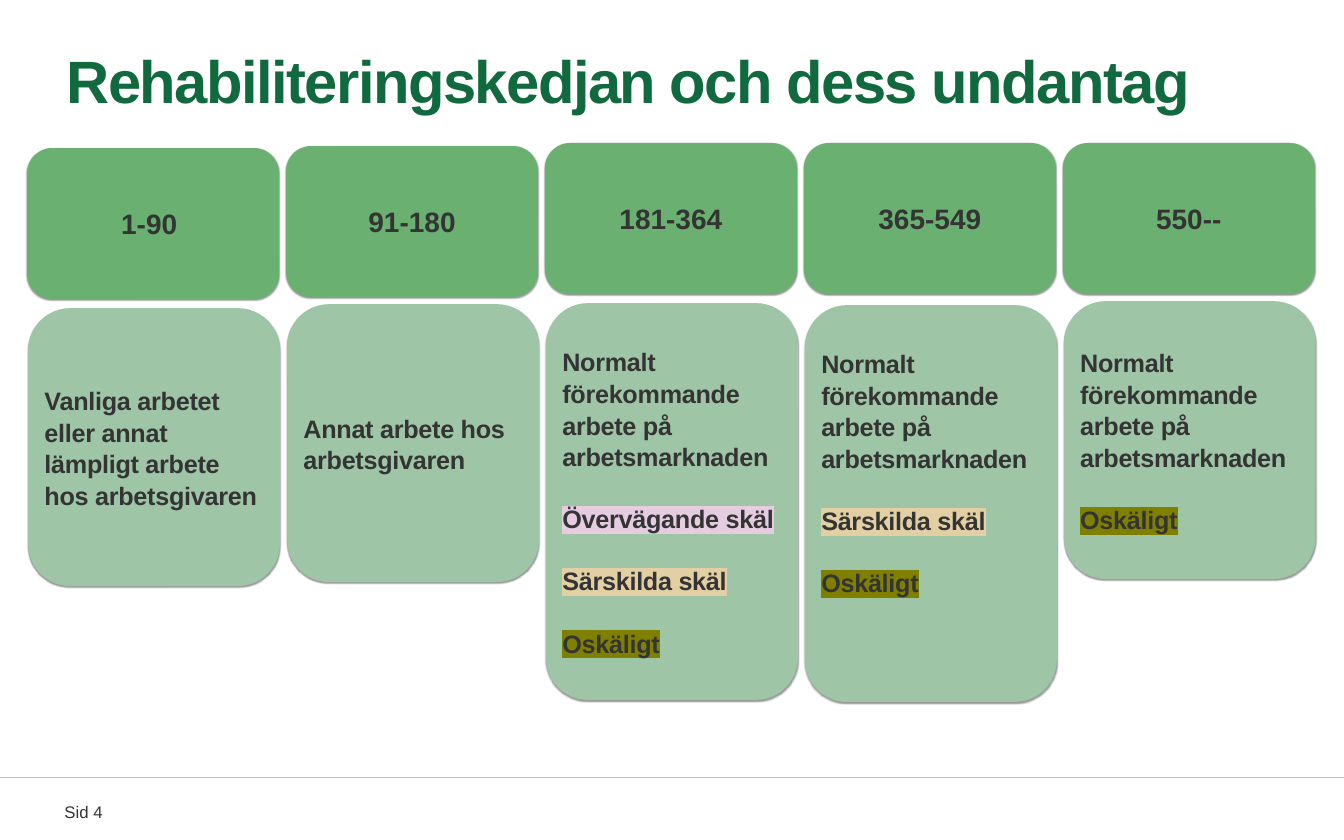
from lxml import etree
from pptx import Presentation
from pptx.dml.color import RGBColor
from pptx.enum.shapes import MSO_CONNECTOR, MSO_SHAPE
from pptx.enum.text import MSO_ANCHOR, PP_ALIGN
from pptx.oxml.ns import qn
from pptx.util import Inches, Pt

WHITE = RGBColor(0xFF, 0xFF, 0xFF)
BLACK = RGBColor(0x00, 0x00, 0x00)
INK = RGBColor(0x34, 0x34, 0x34)
TITLE_GREEN = RGBColor(0x11, 0x69, 0x3E)
DAYS_GREEN = RGBColor(0x69, 0xB0, 0x71)
TEST_GREEN = RGBColor(0x9F, 0xC5, 0xA7)
RULE_GREEN = RGBColor(0xA6, 0xD0, 0xAB)
PINK = RGBColor(0xE6, 0xCC, 0xE1)
SAND = RGBColor(0xE2, 0xCF, 0xA3)
OLIVE = RGBColor(0x80, 0x80, 0x00)

SLIDE_WIDTH, SLIDE_HEIGHT = 13.34, 8.34
FOOTER_TOP = 7.72
FIRST_LEFT, PITCH, CARD_WIDTH = 0.27, 2.57, 2.5
DAYS_HEIGHT = 1.5
LOW, HIGH = 2.76, 3.94

NORMAL_WORK = ("Normalt förekommande arbete på arbetsmarknaden", None)
WEIGHTY = ("Övervägande skäl", PINK)
SPECIAL = ("Särskilda skäl", SAND)
UNREASONABLE = ("Oskäligt", OLIVE)

STEPS = [
    ("1-90 ", 1.47, 3.06, LOW, 0.08,
     [("Vanliga arbetet eller annat lämpligt arbete hos arbetsgivaren", None)]),
    ("91-180", 1.45, 3.02, LOW, 0.08, [("Annat arbete hos arbetsgivaren", None)]),
    ("181-364", 1.42, 3.01, HIGH, 0.08, [NORMAL_WORK, WEIGHTY, SPECIAL, UNREASONABLE]),
    ("365-549", 1.42, 3.03, HIGH, 0.7, [NORMAL_WORK, SPECIAL, UNREASONABLE]),
    ("550--", 1.42, 2.99, LOW, 0.08, [NORMAL_WORK, UNREASONABLE]),
]


def add_shadow(shape):
    shape.shadow.inherit = False
    effects = shape._element.spPr.find(qn("a:effectLst"))
    shadow = etree.SubElement(effects, qn("a:outerShdw"), blurRad=str(Pt(1)),
                              dist=str(Pt(1)), dir="5400000", rotWithShape="0")
    color = etree.SubElement(shadow, qn("a:srgbClr"), val=str(BLACK))
    etree.SubElement(color, qn("a:alpha"), val="40000")


def add_panel(slide, preset, left, top, width, height, color):
    panel = slide.shapes.add_shape(
        preset, Inches(left), Inches(top), Inches(width), Inches(height))
    panel.fill.solid()
    panel.fill.fore_color.rgb = color
    panel.line.fill.background()
    add_shadow(panel)
    return panel


def set_frame(frame, side, top, bottom, anchor):
    frame.word_wrap = True
    frame.vertical_anchor = anchor
    frame.margin_left = frame.margin_right = Inches(side)
    frame.margin_top, frame.margin_bottom = Inches(top), Inches(bottom)


def write(paragraph, text, size, color=INK, bold=True, spacing=0, highlight=None):
    paragraph.text = text
    run = paragraph.runs[0]
    run.font.size = Pt(size)
    run.font.bold = bold
    run.font.color.rgb = color
    run.font.name = "Arial"
    properties = run.font._element
    if spacing:
        properties.set("spc", str(round(spacing * 100)))
    if highlight is not None:
        marker = etree.Element(qn("a:highlight"))
        etree.SubElement(marker, qn("a:srgbClr"), val=str(highlight))
        properties.find(qn("a:solidFill")).addnext(marker)


def add_label(slide, left, top, width, height, anchor, text, size, **style):
    label = slide.shapes.add_textbox(
        Inches(left), Inches(top), Inches(width), Inches(height))
    set_frame(label.text_frame, 0, 0, 0, anchor)
    paragraph = label.text_frame.paragraphs[0]
    write(paragraph, text, size, **style)
    return paragraph


def add_days(slide, left, top, days):
    card = add_panel(slide, MSO_SHAPE.ROUNDED_RECTANGLE, left, top,
                     CARD_WIDTH, DAYS_HEIGHT, DAYS_GREEN)
    set_frame(card.text_frame, 0.04, 0.08, 0.08, MSO_ANCHOR.MIDDLE)
    paragraph = card.text_frame.paragraphs[0]
    paragraph.alignment = PP_ALIGN.CENTER
    paragraph.space_after = Pt(6)
    write(paragraph, days, 20)


def add_test(slide, left, top, height, bottom, entries):
    card = add_panel(slide, MSO_SHAPE.ROUNDED_RECTANGLE, left, top,
                     CARD_WIDTH, height, TEST_GREEN)
    frame = card.text_frame
    set_frame(frame, 0.04, 0.08, bottom, MSO_ANCHOR.MIDDLE)
    for index, (text, highlight) in enumerate(entries):
        paragraph = frame.add_paragraph() if index else frame.paragraphs[0]
        paragraph.alignment = PP_ALIGN.LEFT
        paragraph.line_spacing = 1.05
        paragraph.space_before = Pt(21.7 if index else 0)
        write(paragraph, text, 18, spacing=-0.2, highlight=highlight)


def add_footer(slide):
    add_panel(slide, MSO_SHAPE.RECTANGLE, 0, FOOTER_TOP, SLIDE_WIDTH,
              SLIDE_HEIGHT - FOOTER_TOP, WHITE)
    add_label(slide, 0.64, 7.96, 4.72, 0.2, MSO_ANCHOR.TOP, "Sid 4", 12, bold=False)
    rule = slide.shapes.add_connector(
        MSO_CONNECTOR.STRAIGHT, 0, Inches(FOOTER_TOP),
        Inches(SLIDE_WIDTH), Inches(FOOTER_TOP))
    rule.line.color.rgb = RULE_GREEN
    rule.line.width = Pt(1)
    etree.SubElement(rule._element.spPr, qn("a:effectLst"))


def main():
    presentation = Presentation()
    presentation.slide_width = Inches(SLIDE_WIDTH)
    presentation.slide_height = Inches(SLIDE_HEIGHT)
    slide = presentation.slides.add_slide(presentation.slide_layouts[6])
    add_footer(slide)
    title = add_label(slide, 0.66, 0.14, 11.91, 1.39, MSO_ANCHOR.MIDDLE,
                      "Rehabiliteringskedjan och dess undantag", 42.7,
                      color=TITLE_GREEN, spacing=-1.1)
    title.line_spacing = 0.9
    for index, (days, days_top, test_top, height, bottom, entries) in enumerate(STEPS):
        left = FIRST_LEFT + index * PITCH
        add_days(slide, left, days_top, days)
        add_test(slide, left + 0.01, test_top, height, bottom, entries)
    presentation.save("out.pptx")


if __name__ == "__main__":
    main()
